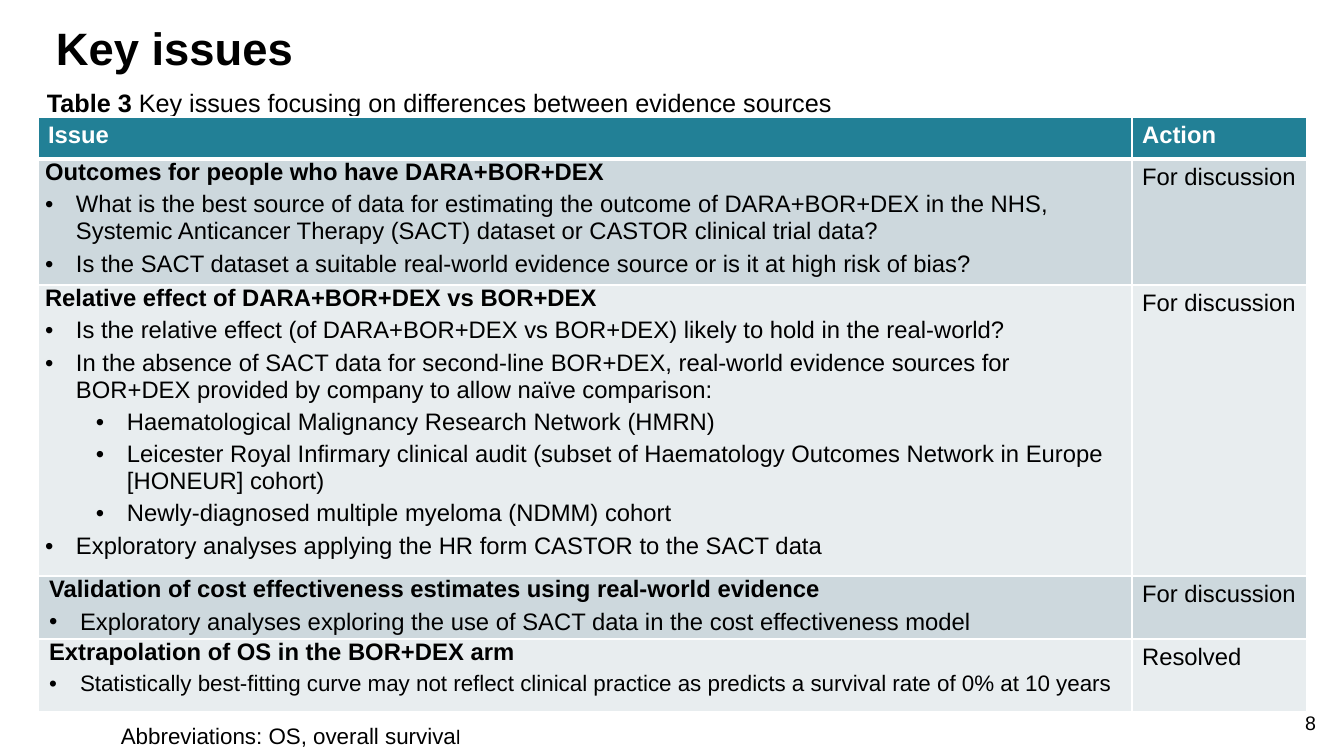
from lxml import etree
from pptx import Presentation
from pptx.dml.color import RGBColor
from pptx.enum.text import MSO_ANCHOR, PP_ALIGN
from pptx.oxml.ns import qn
from pptx.util import Emu, Pt

LEFT, RIGHT, TOP = PP_ALIGN.LEFT, PP_ALIGN.RIGHT, MSO_ANCHOR.TOP
FONT = "Arial"
BLACK, WHITE, TEAL = "000000", "FFFFFF", "228096"
BANDS = ["CDD8DD", "E8EDEF"]
BULLET_INDENT = 31
ROW_HEIGHTS = [42, 126, 290, 63, 73]
COLUMN_WIDTHS = [1094, 175]

# Each issue: (heading, heading indent, [(text, level, size)], action)
ISSUES = [
    ("Outcomes for people who have DARA+BOR+DEX", 0, [
        ("What is the best source of data for estimating the outcome of DARA+BOR+DEX in the NHS, "
         "Systemic Anticancer Therapy (SACT) dataset or CASTOR clinical trial data?", 0, 17),
        ("Is the SACT dataset a suitable real-world evidence source or is it at high risk of bias?", 0, 17),
    ], "For discussion"),
    ("Relative effect of DARA+BOR+DEX vs BOR+DEX", 0, [
        ("Is the relative effect (of DARA+BOR+DEX vs BOR+DEX) likely to hold in the real-world?", 0, 17),
        ("In the absence of SACT data for second-line BOR+DEX, real-world evidence sources for "
         "BOR+DEX provided by company to allow naïve comparison:", 0, 17),
        ("Haematological Malignancy Research Network (HMRN)", 1, 17),
        ("Leicester Royal Infirmary clinical audit (subset of Haematology Outcomes Network in Europe "
         "[HONEUR] cohort)", 1, 17),
        ("Newly-diagnosed multiple myeloma (NDMM) cohort", 1, 17),
        ("Exploratory analyses applying the HR form CASTOR to the SACT data", 0, 17),
    ], "For discussion"),
    ("Validation of cost effectiveness estimates using real-world evidence", 4, [
        ("Exploratory analyses exploring the use of SACT data in the cost effectiveness model", 0, 17),
    ], "For discussion"),
    ("Extrapolation of OS in the BOR+DEX arm", 4, [
        ("Statistically best-fitting curve may not reflect clinical practice as predicts "
         "a survival rate of 0% at 10 years", 0, 16),
    ], "Resolved"),
]


def px(n):
    return Emu(round(n * 914400 / 100.8))


def rgb(color):
    return RGBColor.from_string(color)


def add_run(p, text, size=17, color=BLACK, bold=False):
    r = p.add_run()
    r.text = text
    r.font.name = FONT
    r.font.size = Pt(size)
    r.font.bold = bold
    r.font.color.rgb = rgb(color)


def add_text(s, box, runs, align=LEFT, spacing=1.0, wrap=True):
    sp = s.shapes.add_textbox(*map(px, box))
    tf = sp.text_frame
    tf.word_wrap = wrap
    tf.vertical_anchor = TOP
    p = tf.paragraphs[0]
    p.alignment = align
    p.line_spacing = spacing
    for text, size, bold in runs:
        add_run(p, text, size=size, bold=bold)


def set_indent(p, left, bullet=False):
    pPr = p._p.get_or_add_pPr()
    pPr.set("marL", str(px(left)))
    pPr.set("indent", str(-px(BULLET_INDENT) if bullet else 0))
    if bullet:
        etree.SubElement(pPr, qn("a:buFont")).set("typeface", FONT)
        etree.SubElement(pPr, qn("a:buChar")).set("char", "•")


def style_cell(cell, fill, bottom=1):
    cell.fill.solid()
    cell.fill.fore_color.rgb = rgb(fill)
    cell.vertical_anchor = TOP
    tcPr = cell._tc.get_or_add_tcPr()
    for i, (side, width) in enumerate([("L", 1), ("R", 1), ("T", 1), ("B", bottom)]):
        ln = etree.Element(qn("a:ln" + side), w=str(Pt(width)))
        solid = etree.SubElement(ln, qn("a:solidFill"))
        etree.SubElement(solid, qn("a:srgbClr")).set("val", WHITE)
        tcPr.insert(i, ln)


def fill_label(cell, text, **font):
    p = cell.text_frame.paragraphs[0]
    p.space_after = Pt(2)
    add_run(p, text, **font)


def fill_issue(cell, heading, indent, bullets):
    cell.margin_left = cell.margin_right = px(7)
    cell.margin_top = cell.margin_bottom = 0
    tf = cell.text_frame
    p = tf.paragraphs[0]
    p.space_after = Pt(2)
    set_indent(p, indent)
    add_run(p, heading, bold=True)
    for text, level, size in bullets:
        p = tf.add_paragraph()
        p.level = level
        p.space_before = p.space_after = Pt(2)
        set_indent(p, indent + BULLET_INDENT + 51 * level, bullet=True)
        add_run(p, text, size=size)


def add_issue_table(s, left, top):
    frame = s.shapes.add_table(len(ROW_HEIGHTS), len(COLUMN_WIDTHS), px(left), px(top),
                               px(sum(COLUMN_WIDTHS)), px(sum(ROW_HEIGHTS)))
    table = frame.table
    table.horz_banding = False
    for column, width in zip(table.columns, COLUMN_WIDTHS):
        column.width = px(width)
    for row, height in zip(table.rows, ROW_HEIGHTS):
        row.height = px(height)
    for i, label in enumerate(["Issue", "Action"]):
        cell = table.cell(0, i)
        style_cell(cell, TEAL, bottom=3)
        fill_label(cell, label, color=WHITE, bold=True)
    for i, (heading, indent, bullets, action) in enumerate(ISSUES):
        issue_cell, action_cell = table.cell(i + 1, 0), table.cell(i + 1, 1)
        for cell in (issue_cell, action_cell):
            style_cell(cell, BANDS[i % 2])
        fill_issue(issue_cell, heading, indent, bullets)
        fill_label(action_cell, action)


def add_heading(s, left, top):
    add_text(s, (left + 9, top, 1251, 60), [("Key issues", 32.4, True)], spacing=0.9)
    add_text(s, (left, top + 61, 812, 40), [
        ("Table 3 ", 18, True),
        ("Key issues focusing on differences between evidence sources", 18, False),
    ], wrap=False)


def add_footer(s, left, top):
    add_text(s, (left, top + 11, 1223, 37), [
        ("Abbreviations: OS, overall surviva", 16, False), ("l", 14, False)])
    add_text(s, (left + 1164, top, 51, 40), [("8", 14, False)], align=RIGHT)


def main():
    prs = Presentation()
    prs.slide_width, prs.slide_height = px(1344), px(756)
    s = prs.slides.add_slide(prs.slide_layouts[6])
    add_heading(s, 37, 21)
    add_footer(s, 111, 706)
    add_issue_table(s, 38, 117)
    prs.save("out.pptx")


if __name__ == "__main__":
    main()
